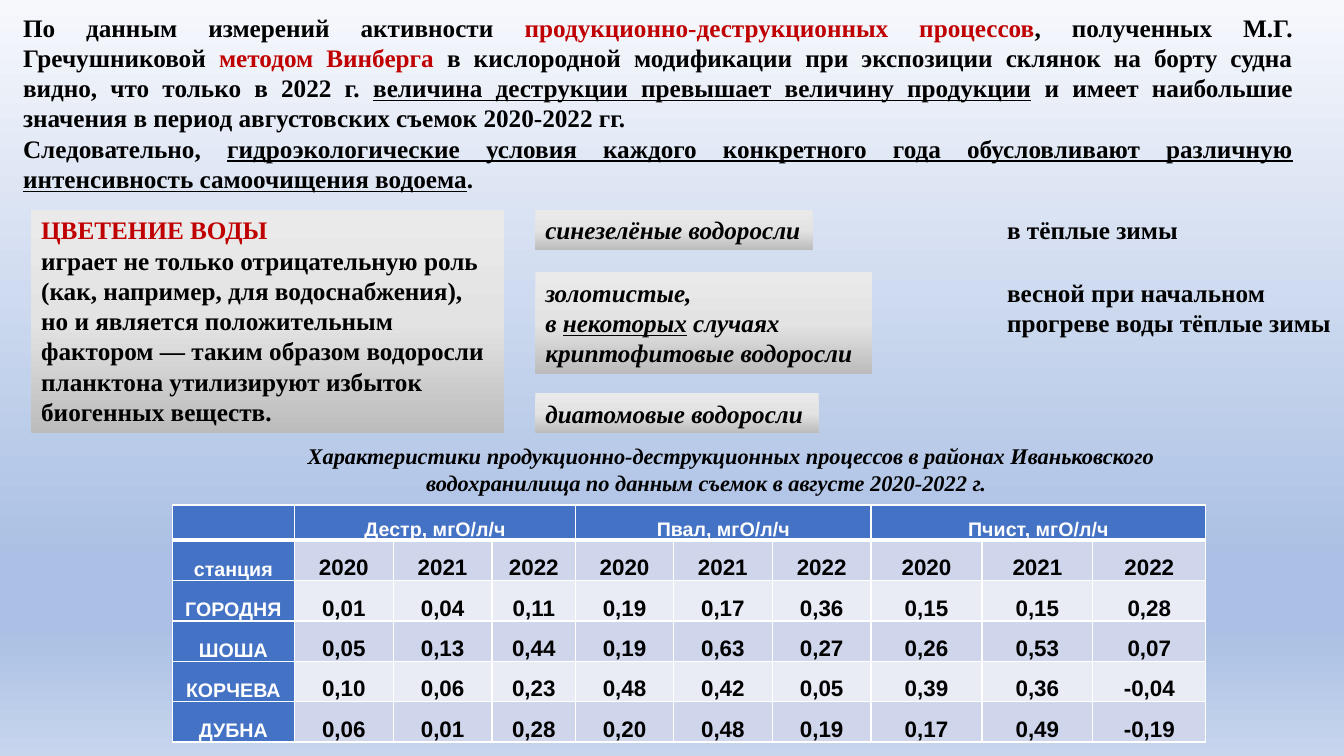
from lxml import etree
from pptx import Presentation
from pptx.dml.color import RGBColor
from pptx.enum.shapes import MSO_SHAPE
from pptx.enum.text import MSO_ANCHOR, MSO_AUTO_SIZE, PP_ALIGN
from pptx.oxml.ns import qn
from pptx.util import Inches, Pt

RECTANGLE = MSO_SHAPE.RECTANGLE
BOTTOM, TOP = MSO_ANCHOR.BOTTOM, MSO_ANCHOR.TOP
GROW = MSO_AUTO_SIZE.SHAPE_TO_FIT_TEXT
LEFT, CENTER, JUSTIFY = PP_ALIGN.LEFT, PP_ALIGN.CENTER, PP_ALIGN.JUSTIFY

BLACK = RGBColor(0x00, 0x00, 0x00)
WHITE = RGBColor(0xFF, 0xFF, 0xFF)
RED = RGBColor(0xC0, 0x00, 0x00)
BLUE = RGBColor(0x44, 0x72, 0xC4)
DARK_BAND = RGBColor(0xCF, 0xD5, 0xEA)
LIGHT_BAND = RGBColor(0xE9, 0xEB, 0xF5)
PALE_SKY = RGBColor(0xF6, 0xF8, 0xFC)
SKY = RGBColor(0xAB, 0xC0, 0xE4)
LOW_SKY = RGBColor(0xC7, 0xD5, 0xED)
PALE_GRAY = RGBColor(0xEB, 0xEA, 0xEA)
MIDDLE_GRAY = RGBColor(0xE4, 0xE3, 0xE3)
DARK_GRAY = RGBColor(0xBD, 0xBC, 0xBC)

BACKGROUND_STOPS = [(0, PALE_SKY), (74, SKY), (83, SKY), (100, LOW_SKY)]
PANEL_STOPS = [(0, PALE_GRAY), (50, MIDDLE_GRAY), (100, DARK_GRAY)]

RED_TEXT = {"color": RED}
UNDERLINED = {"underline": True}
ITALIC = {"italic": True}
ITALIC_UNDERLINED = {"italic": True, "underline": True}

INTRODUCTION = [
    [("По данным измерений активности ", {}),
     ("продукционно-деструкционных процессов", RED_TEXT),
     (", полученных М.Г. Гречушниковой ", {}),
     ("методом Винберга ", RED_TEXT),
     ("в кислородной модификации при экспозиции склянок на борту судна "
      "видно, что только в 2022 г. ", {}),
     ("величина деструкции превышает величину продукции", UNDERLINED),
     (" и имеет наибольшие значения в период августовских съемок 2020-2022 гг. ", {})],
    [("Следовательно, ", {}),
     ("гидроэкологические условия каждого конкретного года обусловливают "
      "различную интенсивность самоочищения водоема", UNDERLINED),
     (".", {})],
]
BLOOM = [
    [("ЦВЕТЕНИЕ ВОДЫ", RED_TEXT)],
    [("играет не только отрицательную роль (как, например, для водоснабжения), "
      "но и является положительным фактором — таким образом водоросли планктона "
      "утилизируют избыток биогенных веществ.", {})],
]
BLUE_GREEN = [[("синезелёные водоросли", ITALIC)]]
GOLDEN = [
    [("золотистые,", ITALIC)],
    [("в ", ITALIC), ("некоторых", ITALIC_UNDERLINED), (" случаях", ITALIC)],
    [("криптофитовые водоросли", ITALIC)],
]
DIATOMS = [[("диатомовые водоросли", ITALIC)]]
WARM_WINTERS = [[("в тёплые зимы", {})]]
SPRING = [[("весной при начальном", {})], [("прогреве воды тёплые зимы", {})]]
CAPTION = [[("Характеристики продукционно-деструкционных процессов в районах "
             "Иваньковского водохранилища по данным съемок в августе 2020-2022 г.",
             ITALIC)]]

INDICATORS = ["Дестр, мгО/л/ч", "Пвал, мгО/л/ч", "Пчист, мгО/л/ч"]
YEARS = ["2020", "2021", "2022"]
STATIONS = [
    ["ГОРОДНЯ", "0,01", "0,04", "0,11", "0,19", "0,17", "0,36", "0,15", "0,15", "0,28"],
    ["ШОША", "0,05", "0,13", "0,44", "0,19", "0,63", "0,27", "0,26", "0,53", "0,07"],
    ["КОРЧЕВА", "0,10", "0,06", "0,23", "0,48", "0,42", "0,05", "0,39", "0,36", "-0,04"],
    ["ДУБНА", "0,06", "0,01", "0,28", "0,20", "0,48", "0,19", "0,17", "0,49", "-0,19"],
]
COLUMN_WIDTHS = [1.21, 0.98, 0.98, 0.83, 0.97, 0.98, 0.98, 1.1, 1.1, 1.12]


def set_gradient(fill, element, stops):
    fill.gradient()
    fill.gradient_angle = 270
    stop_list = next(element.iter(qn("a:gsLst")))
    for stop in list(stop_list):
        stop_list.remove(stop)
    for position, color in stops:
        stop = etree.SubElement(stop_list, qn("a:gs"), pos=str(position * 1000))
        etree.SubElement(stop, qn("a:srgbClr"), val=str(color))


def add_run(paragraph, text, size, font="Times New Roman", color=BLACK,
            italic=False, underline=False):
    run = paragraph.add_run()
    run.text = text
    run.font.name = font
    run.font.size = Pt(size)
    run.font.bold = True
    run.font.italic = italic
    run.font.underline = underline
    run.font.color.rgb = color


def write_text(shape, paragraphs, size=18, alignment=LEFT, wrap=True):
    frame = shape.text_frame
    frame.word_wrap = wrap
    frame.auto_size = GROW
    frame.vertical_anchor = TOP
    for index, runs in enumerate(paragraphs):
        paragraph = frame.add_paragraph() if index else frame.paragraphs[0]
        paragraph.alignment = alignment
        for text, style in runs:
            add_run(paragraph, text, size, **style)


def add_text(slide, box, paragraphs, **options):
    shape = slide.shapes.add_textbox(*map(Inches, box))
    write_text(shape, paragraphs, **options)
    return shape


def add_panel(slide, box, paragraphs, **options):
    shape = slide.shapes.add_shape(RECTANGLE, *map(Inches, box))
    shape.shadow.inherit = False
    set_gradient(shape.fill, shape.element, PANEL_STOPS)
    shape.line.fill.background()
    write_text(shape, paragraphs, **options)


def set_borders(cell, bottom_width):
    properties = cell._tc.get_or_add_tcPr()
    for side, width in (("L", 1), ("R", 1), ("T", 1), ("B", bottom_width)):
        line = etree.SubElement(properties, qn(f"a:ln{side}"), w=str(Pt(width)))
        fill = etree.SubElement(line, qn("a:solidFill"))
        etree.SubElement(fill, qn("a:srgbClr"), val=str(WHITE))


def format_cell(cell, text, row, column):
    heading = row == 0 or column == 0
    band = DARK_BAND if row % 2 else LIGHT_BAND
    set_borders(cell, 1 if row else 3)
    cell.fill.solid()
    cell.fill.fore_color.rgb = BLUE if heading else band
    cell.vertical_anchor = BOTTOM
    cell.margin_top = cell.margin_bottom = 0
    if text:
        paragraph = cell.text_frame.paragraphs[0]
        paragraph.alignment = CENTER
        paragraph.line_spacing = 1.5
        add_run(paragraph, text, 14 if heading else 16, "Arial",
                WHITE if heading else BLACK)


def add_measurements(slide):
    header = [""]
    for indicator in INDICATORS:
        header += [indicator, "", ""]
    rows = [header, ["станция"] + YEARS * len(INDICATORS)] + STATIONS
    box = map(Inches, (1.71, 5.01, 10.25, 2.06))
    frame = slide.shapes.add_table(len(rows), len(COLUMN_WIDTHS), *box)
    table = frame.table
    for column, width in zip(table.columns, COLUMN_WIDTHS):
        column.width = Inches(width)
    for row, values in enumerate(rows):
        table.rows[row].height = Inches(0.2)
        for column, text in enumerate(values):
            format_cell(table.cell(row, column), text, row, column)
    for first in range(1, len(COLUMN_WIDTHS), len(YEARS)):
        table.cell(0, first).merge(table.cell(0, first + len(YEARS) - 1))
    frame.height = Inches(2.06)


def main():
    presentation = Presentation()
    presentation.slide_width = Inches(13.33)
    presentation.slide_height = Inches(7.5)
    slide = presentation.slides.add_slide(presentation.slide_layouts[6])
    set_gradient(slide.background.fill, slide.element, BACKGROUND_STOPS)

    add_text(slide, (0.13, 0.07, 12.79, 1.92), INTRODUCTION, alignment=JUSTIFY)
    add_measurements(slide)
    caption = add_text(slide, (2.42, 4.34, 9.17, 0.64), CAPTION, size=16, alignment=CENTER)
    caption_properties = caption.text_frame.paragraphs[0]._p.get_or_add_pPr()
    caption_properties.set("indent", str(Inches(0.49)))

    add_panel(slide, (0.31, 2.08, 4.69, 2.22), BLOOM)
    add_panel(slide, (5.31, 2.08, 2.75, 0.4), BLUE_GREEN, wrap=False)
    add_panel(slide, (5.31, 2.7, 3.34, 1.01), GOLDEN)
    add_panel(slide, (5.31, 3.9, 2.81, 0.4), DIATOMS, wrap=False)
    add_text(slide, (9.89, 2.08, 1.91, 0.4), WARM_WINTERS, wrap=False)
    add_text(slide, (9.89, 2.7, 3.44, 0.71), SPRING, wrap=False)
    presentation.save("out.pptx")


if __name__ == "__main__":
    main()
